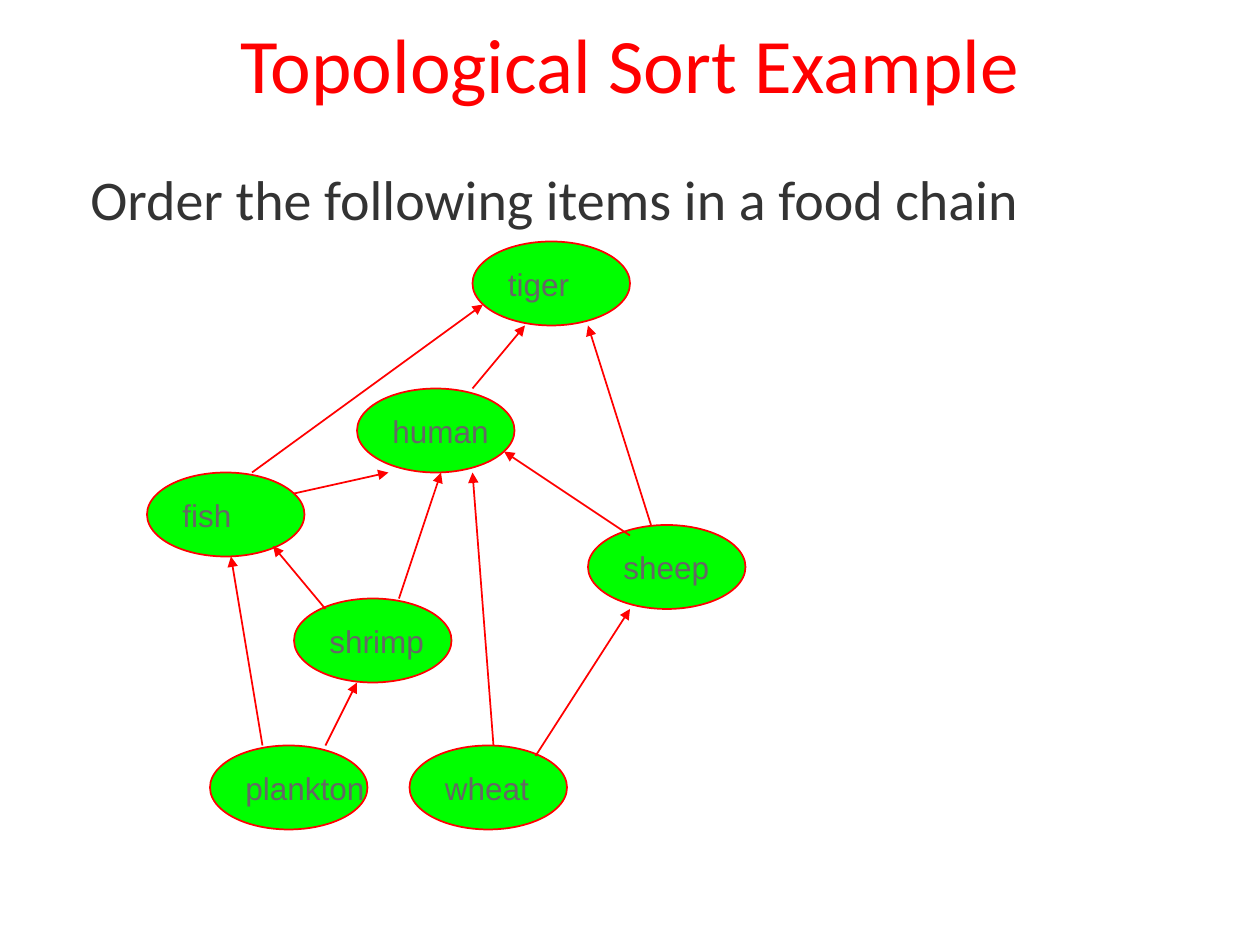
from lxml import etree
from pptx import Presentation
from pptx.dml.color import RGBColor
from pptx.enum import shapes, text
from pptx.oxml import ns
from pptx.util import Cm, Pt

RED = RGBColor(0xFF, 0x00, 0x00)
GREEN = RGBColor(0x00, 0xFF, 0x00)
DARK = RGBColor(0x33, 0x33, 0x33)
GREY = RGBColor(0x66, 0x66, 0x66)

# Content: positions count grid steps, twelve to the inch
TITLE = "Topological Sort Example"
TASK = "Order the following items in a food chain"
ANIMALS = {  # left, top
    "fish": (14, 45),
    "human": (34, 37),
    "shrimp": (28, 57),
    "sheep": (56, 50),
    "wheat": (39, 71),
    "plankton": (20, 71),
    "tiger": (45, 23),
}
FEEDING = [  # point at the eater (arrowhead), point at the eaten
    ((50, 31), (45, 37)),  # tiger, human
    ((37, 45), (28, 47)),  # human, fish
    ((48, 43), (60, 51)),  # human, sheep
    ((42, 45), (38, 57)),  # human, shrimp
    ((26, 52), (31, 58)),  # fish, shrimp
    ((22, 53), (25, 71)),  # fish, plankton
    ((45, 45), (47, 71)),  # human, wheat
    ((60, 58), (51, 72)),  # sheep, wheat
    ((46, 29), (24, 45)),  # tiger, fish
    ((56, 31), (62, 50)),  # tiger, sheep
    ((34, 65), (31, 71)),  # shrimp, plankton
]
OVAL_SIZE = (15, 8)


def grid(steps):
    return Cm(steps * 2.54 / 12)


def place(shape, left, top, width, height):
    shape.left, shape.top = Cm(left), Cm(top)
    shape.width, shape.height = Cm(width), Cm(height)


def style(para, name, size, color):
    para.font.name, para.font.size = name, Pt(size)
    para.font.color.rgb = color


def add_oval(page, label, position):
    oval = page.shapes.add_shape(shapes.MSO_SHAPE.OVAL, *map(grid, position + OVAL_SIZE))
    oval.shadow.inherit = False
    oval.fill.solid()
    oval.fill.fore_color.rgb = GREEN
    oval.line.color.rgb, oval.line.width = RED, Pt(1)
    frame = oval.text_frame
    frame.word_wrap = False
    frame.vertical_anchor = text.MSO_ANCHOR.MIDDLE
    para = frame.paragraphs[0]
    para.text = label
    para.alignment = text.PP_ALIGN.LEFT
    style(para, "Arial", 18, GREY)


def add_arrow(page, eater, eaten):
    arrow = page.shapes.add_connector(
        shapes.MSO_CONNECTOR.STRAIGHT, *map(grid, eater + eaten))
    arrow.line.color.rgb, arrow.line.width = RED, Pt(1)
    etree.SubElement(arrow.line._get_or_add_ln(), ns.qn("a:headEnd"), type="triangle")
    etree.SubElement(arrow._element.spPr, ns.qn("a:effectLst"))


def main():
    deck = Presentation()
    deck.slide_width, deck.slide_height = Cm(25.4), Cm(19.05)
    page = deck.slides.add_slide(deck.slide_layouts[1])

    # Title
    title = page.shapes.title
    place(title, 1.27, 0, 22.86, 2.54)
    title.text_frame.vertical_anchor = text.MSO_ANCHOR.MIDDLE
    para = title.text_frame.paragraphs[0]
    para.text = TITLE
    para.alignment = text.PP_ALIGN.CENTER
    style(para, "Calibri", 44, RED)

    # Task line, without a bullet
    body = page.placeholders[1]
    place(body, 1.69, 3.18, 23.07, 14.05)
    frame = body.text_frame
    frame.margin_left = frame.margin_top = Cm(0.13)
    frame.margin_right = frame.margin_bottom = Cm(0.05)
    para = frame.paragraphs[0]
    para.text = TASK
    para.space_before = Pt(0)
    properties = para._p.get_or_add_pPr()
    properties.set("marL", str(Cm(0.95)))
    properties.set("indent", str(-Cm(0.95)))
    etree.SubElement(properties, ns.qn("a:buNone"))
    style(para, "Calibri", 32, DARK)

    # Food chain
    for label, position in ANIMALS.items():
        add_oval(page, label, position)
    for eater, eaten in FEEDING:
        add_arrow(page, eater, eaten)

    deck.save("out.pptx")


if __name__ == "__main__":
    main()
